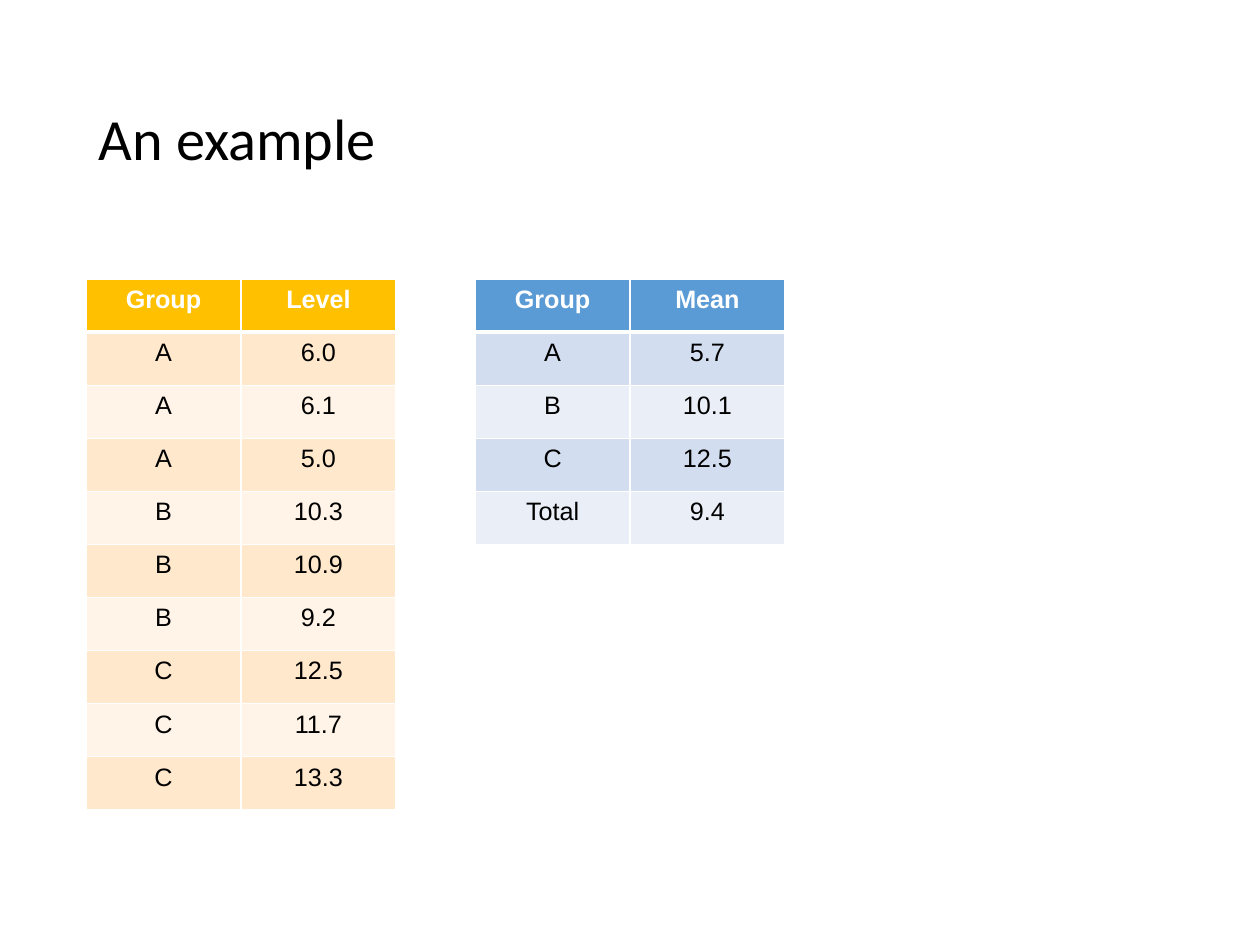
from dataclasses import dataclass

import lxml.etree
import pptx
import pptx.dml.color
import pptx.enum.text
import pptx.oxml
import pptx.oxml.ns
import pptx.util


@dataclass(frozen=True)
class Theme:
    title_font: str = "Calibri"
    table_font: str = "Arial"
    title_size: int = 37
    table_size: int = 16
    ink: str = "000000"
    paper: str = "FFFFFF"
    gold: tuple = ("FFC000", "FFE8CC", "FFF4E7")
    blue: tuple = ("5B9BD5", "D2DEEF", "EAEFF7")
    rule: int = 1
    header_rule: int = 3


THEME = Theme()
SLIDE_WIDTH, SLIDE_HEIGHT = 11.11, 8.33
MARGIN = 0.76
TABLE_TOP = 2.46
COLUMN, ROW = 1.365, 0.468
TABLE_STEP = 3.43
INSET_X, INSET_Y = 0.11, 0.06

LEVELS = [
    ("Group", "Level"),
    ("A", "6.0"), ("A", "6.1"), ("A", "5.0"),
    ("B", "10.3"), ("B", "10.9"), ("B", "9.2"),
    ("C", "12.5"), ("C", "11.7"), ("C", "13.3"),
]
MEANS = [("Group", "Mean"), ("A", "5.7"), ("B", "10.1"), ("C", "12.5"), ("Total", "9.4")]


def inches(*lengths):
    return [pptx.util.Inches(length) for length in lengths]


def style_font(font, family, size, color, bold=False):
    font.name = family
    font.size = pptx.util.Pt(size)
    font.bold = bold
    font.color.rgb = pptx.dml.color.RGBColor.from_string(color)


def add_borders(cell, row):
    properties = cell._tc.get_or_add_tcPr()
    for side in "LRTB":
        beside_header = (row, side) in ((0, "B"), (1, "T"))
        width = THEME.header_rule if beside_header else THEME.rule
        border = lxml.etree.SubElement(
            properties, pptx.oxml.ns.qn(f"a:ln{side}"), w=str(pptx.util.Pt(width)))
        fill = lxml.etree.SubElement(border, pptx.oxml.ns.qn("a:solidFill"))
        lxml.etree.SubElement(fill, pptx.oxml.ns.qn("a:srgbClr"), val=THEME.paper)


def fill_cell(cell, text, row, palette):
    is_header = row == 0
    cell.margin_left, cell.margin_right, cell.margin_top, cell.margin_bottom = inches(
        INSET_X, INSET_X, INSET_Y, INSET_Y)
    add_borders(cell, row)
    header, odd, even = palette
    color = header if is_header else odd if row % 2 else even
    cell.fill.solid()
    cell.fill.fore_color.rgb = pptx.dml.color.RGBColor.from_string(color)
    cell.text = text
    paragraph = cell.text_frame.paragraphs[0]
    paragraph.alignment = pptx.enum.text.PP_ALIGN.CENTER
    style_font(paragraph.font, THEME.table_font, THEME.table_size,
               THEME.paper if is_header else THEME.ink, is_header)


def add_group_table(slide, left, top, records, palette):
    columns = len(records[0])
    box = inches(left, top, columns * COLUMN, len(records) * ROW)
    table = slide.shapes.add_table(len(records), columns, *box).table
    for column in table.columns:
        column.width = pptx.util.Inches(COLUMN)
    for row, record in enumerate(records):
        table.rows[row].height = pptx.util.Inches(ROW)
        for column, text in enumerate(record):
            fill_cell(table.cell(row, column), text, row, palette)


def set_title(slide, text, left, top, width, height):
    title = slide.shapes.title
    title.left, title.top, title.width, title.height = inches(left, top, width, height)
    frame = title.text_frame
    frame.text = text
    frame.word_wrap = True
    frame.vertical_anchor = pptx.enum.text.MSO_ANCHOR.MIDDLE
    frame.margin_left, frame.margin_right, frame.margin_top, frame.margin_bottom = inches(
        *[INSET_X] * 4)
    paragraph = frame.paragraphs[0]
    paragraph.alignment = pptx.enum.text.PP_ALIGN.LEFT
    paragraph.line_spacing = 0.9
    style_font(paragraph.font, THEME.title_font, THEME.title_size, THEME.ink)


def main():
    deck = pptx.Presentation()
    deck.slide_width, deck.slide_height = inches(SLIDE_WIDTH, SLIDE_HEIGHT)
    slide = deck.slides.add_slide(deck.slide_layouts[5])
    set_title(slide, "An example", MARGIN, 0.44, SLIDE_WIDTH - 2 * MARGIN, 1.61)
    add_group_table(slide, MARGIN, TABLE_TOP, LEVELS, THEME.gold)
    add_group_table(slide, MARGIN + TABLE_STEP, TABLE_TOP, MEANS, THEME.blue)
    deck.save("out.pptx")


if __name__ == "__main__":
    main()
